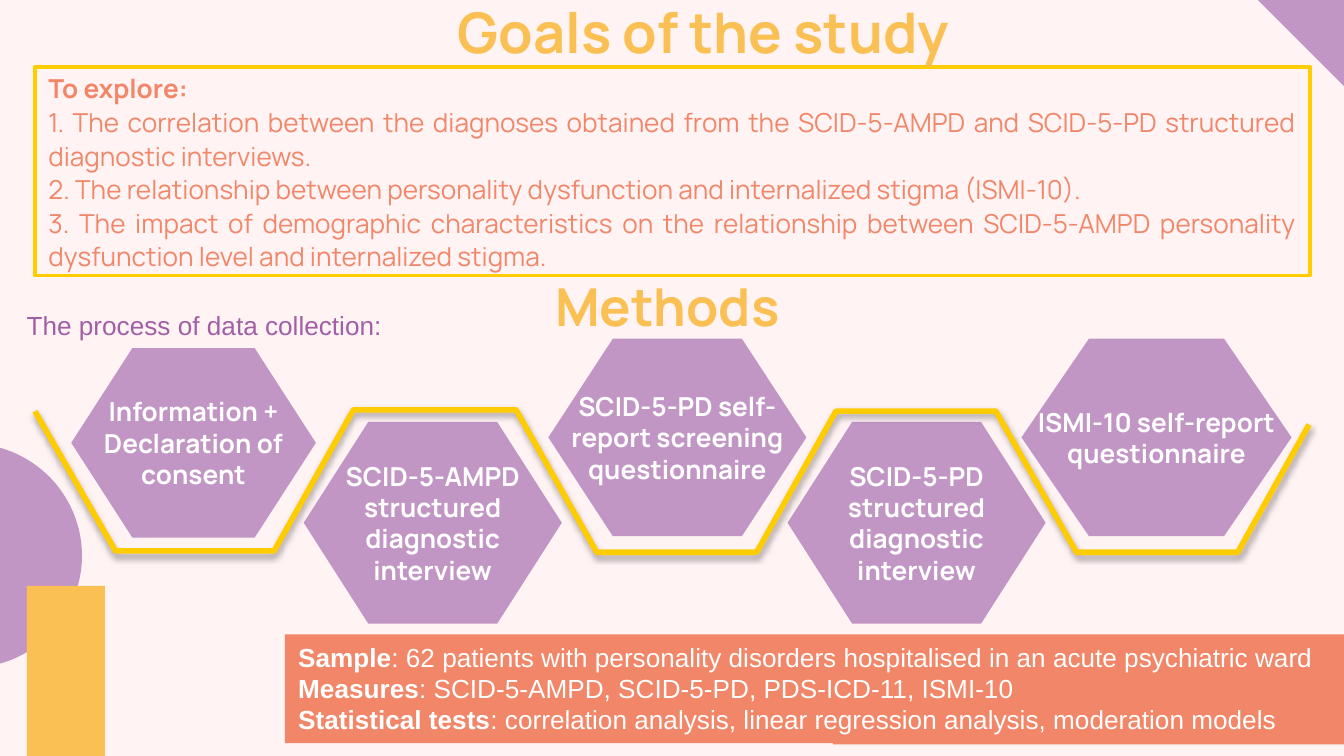
from lxml import etree
from pptx import Presentation
from pptx.dml.color import RGBColor
from pptx.enum.shapes import MSO_SHAPE
from pptx.enum.text import MSO_ANCHOR, MSO_AUTO_SIZE, PP_ALIGN
from pptx.oxml.ns import qn
from pptx.util import Inches, Pt

PINK = RGBColor(0xFF, 0xF3, 0xF4)
LILAC = RGBColor(0xC2, 0x96, 0xC4)
PURPLE = RGBColor(0xA2, 0x5F, 0xA5)
AMBER = RGBColor(0xFB, 0xC0, 0x53)
GOLD = RGBColor(0xFF, 0xCC, 0x00)
CORAL = RGBColor(0xF1, 0x86, 0x68)
WHITE = RGBColor(0xFF, 0xFF, 0xFF)

OVAL, RECT, CORNER = MSO_SHAPE.OVAL, MSO_SHAPE.RECTANGLE, MSO_SHAPE.RIGHT_TRIANGLE
TOP, MIDDLE = MSO_ANCHOR.TOP, MSO_ANCHOR.MIDDLE
LEFT, CENTER, JUSTIFY = PP_ALIGN.LEFT, PP_ALIGN.CENTER, PP_ALIGN.JUSTIFY
HEAD, BODY = "Manrope", "Arial"

# Content: a paragraph is a list of (text, bold) runs
GOALS = [
    [("To explore:", True)],
    [("1. The correlation between the diagnoses obtained from the SCID-5-AMPD "
      "and SCID-5-PD structured diagnostic interviews.", False)],
    [("2. The relationship between personality dysfunction and internalized "
      "stigma (ISMI-10).", False)],
    [("3. The impact of demographic characteristics on the relationship between "
      "SCID-5-AMPD personality dysfunction level and internalized stigma.", False)],
]
FACTS = [
    ("Sample", "62 patients with personality disorders hospitalised in an acute "
               "psychiatric ward"),
    ("Measures", "SCID-5-AMPD, SCID-5-PD, PDS-ICD-11, ISMI-10"),
    ("Statistical tests", "correlation analysis, linear regression analysis, "
                          "moderation models"),
]
# Steps: text, left, top, width, height
STEPS = [
    ("Information + Declaration of consent", 0.53, 2.59, 1.82, 1.41),
    ("SCID-5-AMPD structured diagnostic interview", 2.26, 3.14, 1.92, 1.5),
    ("SCID-5-PD self-report screening questionnaire", 4.08, 2.52, 1.92, 1.47),
    ("SCID-5-PD structured diagnostic interview", 5.86, 3.14, 1.92, 1.5),
    ("ISMI-10 self-report questionnaire", 7.6, 2.52, 2.01, 1.47),
]
TRAIL = [(0.26, 3.06), (0.86, 4.1), (2.04, 4.1), (2.63, 3.05), (3.84, 3.05),
         (4.44, 4.11), (5.63, 4.11), (6.22, 3.06), (7.41, 3.06), (8.01, 4.11),
         (9.21, 4.11), (9.74, 3.16)]
# Decor: kind, box, colour, rotation
DECOR = [
    (OVAL, (-1.07, 3.3, 1.68, 1.67), LILAC, 0),
    (RECT, (0.2, 4.36, 0.58, 1.72), AMBER, 0),
    (RECT, (6.2, 4.96, 3.8, 0.58), CORAL, 0),
    (CORNER, (9.36, 0, 0.64, 0.64), LILAC, 180),
]

deck = Presentation()
deck.slide_width = Inches(10)
deck.slide_height = deck.slide_width * 9 // 16
slide = deck.slides.add_slide(deck.slide_layouts[1])
slide.background.fill.solid()
slide.background.fill.fore_color.rgb = PINK
shapes = slide.shapes


def place(shape, box):
    shape.left, shape.top, shape.width, shape.height = map(Inches, box)


def paint(shape, color):
    shape.shadow.inherit = False
    shape.fill.solid()
    shape.fill.fore_color.rgb = color
    shape.line.fill.background()


def write(shape, paras, font, size, color, align, anchor=TOP, inset=0.1):
    frame = shape.text_frame
    frame.word_wrap = True
    frame.auto_size = MSO_AUTO_SIZE.NONE
    frame.vertical_anchor = anchor
    frame.margin_left = frame.margin_right = Inches(0.1)
    frame.margin_top = frame.margin_bottom = Inches(inset)
    for i, runs in enumerate(paras):
        para = frame.add_paragraph() if i else frame.paragraphs[0]
        para.alignment = align
        para.space_before = Pt(0)
        for text, bold in runs:
            run = para.add_run()
            run.text = text
            run.font.name, run.font.size = font, Pt(size)
            run.font.bold, run.font.color.rgb = bold, color


def trace(points, close):
    spots = [(Inches(x), Inches(y)) for x, y in points]
    pen = shapes.build_freeform(*spots[0])
    pen.add_line_segments(spots[1:], close=close)
    shape = pen.convert_to_shape()
    shape.shadow.inherit = False
    return shape


# Corner decor
for kind, box, color, turn in DECOR:
    shape = shapes.add_shape(kind, *map(Inches, box))
    paint(shape, color)
    shape.rotation = turn

# Headings
title = shapes.title
place(title, (0.75, 1.94, 8.43, 0.63))
write(title, [[("Methods", True)]], HEAD, 28, AMBER, CENTER)
top = shapes.add_textbox(*map(Inches, (1.02, -0.12, 8.43, 0.63)))
write(top, [[("Goals of the study", True)]], HEAD, 30, AMBER, CENTER)
label = shapes.add_textbox(*map(Inches, (0.1, 2.25, 5.53, 0.34)))
write(label, [[("The process of data collection:", False)]],
      BODY, 14, PURPLE, LEFT, inset=0.05)

# Goals list in a gold frame
goals = slide.placeholders[1]
place(goals, (0.26, 0.5, 9.49, 1.55))
goals.line.color.rgb, goals.line.width = GOLD, Pt(2)
write(goals, GOALS, HEAD, 14, CORAL, JUSTIFY, MIDDLE, 0.05)
for para in goals.text_frame.paragraphs:
    para.line_spacing = 1.07
    props = para._p.get_or_add_pPr()
    props.set("marL", "0")
    props.set("indent", "0")
    etree.SubElement(props, qn("a:buNone"))

# Hexagon steps, with corners a quarter of the width in
for text, x, y, w, h in STEPS:
    near, far, mid = x + w / 4, x + w * 3 / 4, y + h / 2
    hexagon = trace([(near, y), (x, mid), (near, y + h),
                     (far, y + h), (x + w, mid), (far, y)], True)
    paint(hexagon, LILAC)
    write(hexagon, [[(text, True)]], HEAD, 14, WHITE, CENTER, MIDDLE)

# Gold trail with a soft shadow
trail = trace(TRAIL, False)
trail.fill.background()
trail.line.color.rgb, trail.line.width = GOLD, Pt(3)
effects = trail._element.spPr.find(qn("a:effectLst"))
shade = etree.SubElement(effects, qn("a:outerShdw"), blurRad=str(Pt(3.1)),
                         dist=str(Pt(1.8)), dir="5400000", rotWithShape="0")
black = etree.SubElement(shade, qn("a:srgbClr"), val="000000")
etree.SubElement(black, qn("a:alpha"), val="35000")

# Sample and measures
facts = shapes.add_shape(RECT, *map(Inches, (2.12, 4.72, 7.88, 0.81)))
paint(facts, CORAL)
write(facts, [[(name, True), (": " + text, False)] for name, text in FACTS],
      BODY, 14, WHITE, LEFT, inset=0.05)

deck.save("out.pptx")
